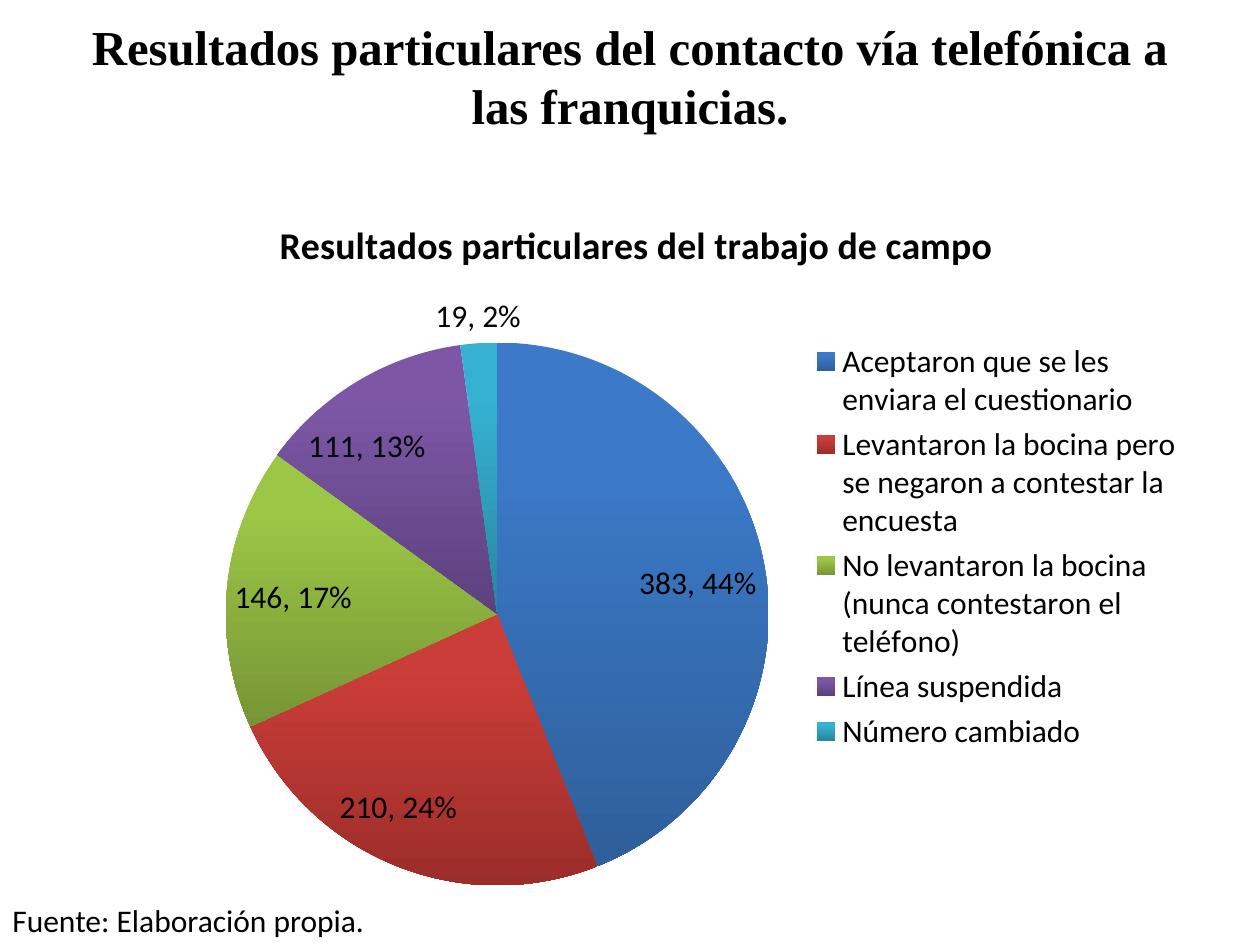
from lxml import etree
from pptx import Presentation
from pptx import util as u
from pptx.chart.data import CategoryChartData
from pptx.dml.color import RGBColor
from pptx.enum import chart as charts, text

COLOURS = {"black": "000000", "blue": "3C7AC9", "dark blue": "2E5F9A",
           "red": "CB3D38", "dark red": "9B2D2A", "green": "9CC746",
           "dark green": "769535", "purple": "7D57A6", "dark purple": "5D417E",
           "cyan": "36B1D2", "dark cyan": "2787A0"}
CHART_NS = "http://schemas.openxmlformats.org/drawingml/2006/chart"

RESULTS = [
    ("Aceptaron que se les enviara el cuestionario", 202, "383, 44%", "blue", None),
    ("Levantaron la bocina pero se negaron a contestar la encuesta", 111,
     "210, 24%", "red", (-5.2, -4.6)),
    ("No levantaron la bocina (nunca contestaron el teléfono)", 77,
     "146, 17%", "green", (0, -1.3)),
    ("Línea suspendida", 59, "111, 13%", "purple", (-4.7, 5.6)),
    ("Número cambiado", 10, "19, 2%", "cyan", None),
]


def place(element, index, modes=("xMode", "yMode"), **percents):
    """Give a chart part a manual layout in percents of the chart."""
    tag = f"{{{CHART_NS}}}"
    for old in element.findall(tag + "layout"):
        element.remove(old)
    layout = etree.Element(tag + "layout")
    manual = etree.SubElement(layout, tag + "manualLayout")
    if index == 0:
        etree.SubElement(manual, tag + "layoutTarget", val="inner")
    for name in modes:
        etree.SubElement(manual, tag + name, val="edge")
    for name, value in percents.items():
        etree.SubElement(manual, tag + name, val=f"{value / 100:.3f}")
    element.insert(index, layout)


class SlideWriter:
    """Holds the text style and the current slide."""

    def __init__(self, slide, size=18, name="Calibri"):
        self.slide = slide
        self.style = {"size": size, "name": name, "bold": False}

    def format_font(self, font, **changes):
        for key, value in {**self.style, **changes}.items():
            setattr(font, key, u.Pt(value) if key == "size" else value)
        font.color.rgb = RGBColor.from_string(COLOURS["black"])

    def add_text(self, wording, box, frame_format, alignment, **font):
        shape = self.slide.shapes.add_textbox(*map(u.Cm, box))
        frame = shape.text_frame
        for key, value in frame_format.items():
            setattr(frame, key, value)
        paragraph = frame.paragraphs[0]
        paragraph.alignment = alignment
        run = paragraph.add_run()
        run.text = wording
        self.format_font(run.font, **font)

    def add_pie(self, title, results, box):
        data = CategoryChartData()
        data.categories = [row[0] for row in results]
        data.add_series("Series 1", [row[1] for row in results])
        chart = self.slide.shapes.add_chart(
            charts.XL_CHART_TYPE.PIE, *map(u.Cm, box), data).chart
        self.format_font(chart.font)
        chart.has_title = True
        chart.chart_title.text_frame.text = title
        run = chart.chart_title.text_frame.paragraphs[0].runs[0]
        self.format_font(run.font, size=21.6, bold=True)
        chart.has_legend = True
        chart.legend.position = charts.XL_LEGEND_POSITION.RIGHT
        chart.legend.include_in_layout = False
        self.format_font(chart.legend.font)
        plot = chart.plots[0]
        plot.vary_by_categories = True
        series = plot.series[0]
        labels = series.data_labels
        labels.show_value = labels.show_percentage = True
        for leader in labels._element.findall(f"{{{CHART_NS}}}showLeaderLines"):
            leader.set("val", "0")
        positions = charts.XL_LABEL_POSITION
        for index, (_, _, label, colour, offset) in enumerate(results):
            last = index == len(results) - 1
            position = positions.OUTSIDE_END if last else positions.INSIDE_END
            self.format_slice(series.points[index], label, colour, position, offset)
        place(chart.chart_title._element, 1, x=18.5, y=3.1)
        place(chart.legend._element, 1, x=65.8, y=20.5, w=33, h=59)
        plot_area = chart._chartSpace.xpath("c:chart/c:plotArea")[0]
        place(plot_area, 0, x=14.3, y=21.5, w=48, h=76)

    def format_slice(self, point, label, colour, position, offset):
        fill = point.format.fill
        fill.gradient()
        fill.gradient_angle = 270
        stops = zip(fill.gradient_stops, (0.2, 1), (colour, "dark " + colour))
        for stop, place_on_line, name in stops:
            stop.position = place_on_line
            stop.color.rgb = RGBColor.from_string(COLOURS[name])
        point.format.line.fill.background()
        frame = point.data_label.text_frame
        frame.text = label
        self.format_font(frame.paragraphs[0].runs[0].font)
        point.data_label.position = position
        element = point.data_label._get_or_add_dLbl()
        element.find(f"{{{CHART_NS}}}showPercent").set("val", "1")
        if offset:
            place(element, 1, modes=(), x=offset[0], y=offset[1])


def main():
    presentation = Presentation()
    presentation.slide_width, presentation.slide_height = u.Cm(25.4), u.Cm(19.05)
    writer = SlideWriter(presentation.slides.add_slide(presentation.slide_layouts[6]))
    writer.add_text(
        "Resultados particulares del contacto vía telefónica a las franquicias.",
        (1.27, 0.76, 22.86, 3.18),
        {"word_wrap": True, "vertical_anchor": text.MSO_ANCHOR.MIDDLE,
         "margin_top": 0, "margin_bottom": u.Cm(1.65)},
        text.PP_ALIGN.CENTER, size=27.9, name="Times New Roman", bold=True)
    writer.add_pie("Resultados particulares del trabajo de campo", RESULTS,
                   (1.27, 3.81, 22.86, 14.4))
    writer.add_text(
        "Fuente: Elaboración propia.", (0, 18.03, 7.7, 1.02),
        {"word_wrap": False, "auto_size": text.MSO_AUTO_SIZE.SHAPE_TO_FIT_TEXT},
        text.PP_ALIGN.LEFT)
    presentation.save("out.pptx")


if __name__ == "__main__":
    main()
